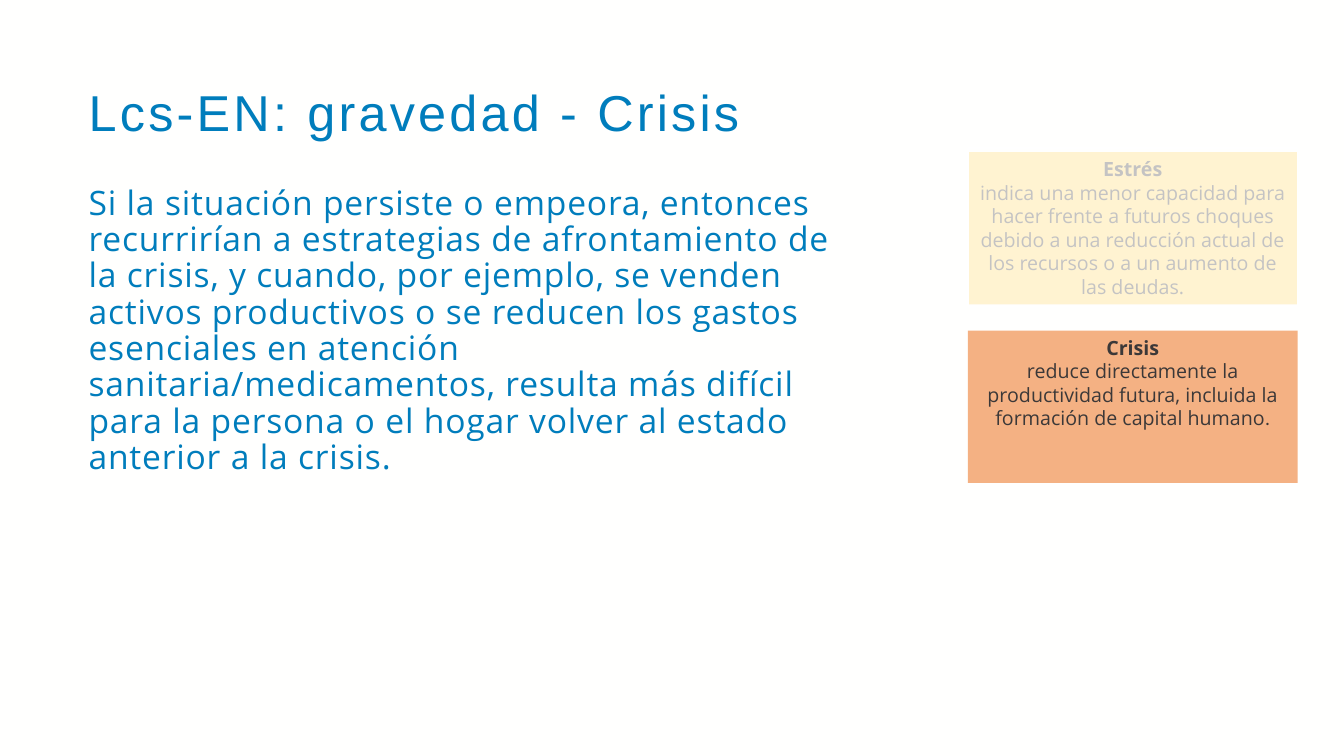
from lxml.etree import SubElement
from pptx import Presentation
from pptx.dml.color import RGBColor
from pptx.enum.shapes import MSO_SHAPE
from pptx.enum.text import MSO_ANCHOR, PP_ALIGN
from pptx.oxml.ns import qn
from pptx.util import Inches, Pt

COLORS = {
    "background": "FFFFFE",
    "blue": "007DBC",
    "stress": "FFD966",
    "crisis": "F4B183",
    "dark": "3B3838",
    "white": "FFFFFF",
}
BODY = (
    "Si la situación persiste o empeora, entonces recurrirían a estrategias de "
    "afrontamiento de la crisis, y cuando, por ejemplo, se venden activos productivos "
    "o se reducen los gastos esenciales en atención sanitaria/medicamentos, resulta "
    "más difícil para la persona o el hogar volver al estado anterior a la crisis."
)
LEVELS = [
    ("stress", "Estrés", [(
        "indica una menor capacidad para hacer frente a futuros choques debido a "
        "una reducción actual de los recursos o a un aumento de las deudas.", "Open Sans")]),
    ("crisis", "Crisis", [
        ("reduce directamente la productividad futura, incluida la formación de "
         "capital humano", "Open Sans"),
        (".", "Calibri")]),
]


def rgb(name):
    """Return the named colour."""
    return RGBColor.from_string(COLORS[name])


def add_run(p, text, font, size, color, bold=False, spacing=0):
    """Add a formatted run, with letter spacing in points."""
    r = p.add_run()
    r.text = text
    r.font.name, r.font.size, r.font.bold = font, Pt(size), bold
    r.font.color.rgb = rgb(color)
    if spacing:
        r.font._element.set("spc", str(round(spacing * 100)))


def place(sp, box):
    """Move a shape to a box given in inches."""
    sp.left, sp.top, sp.width, sp.height = map(Inches, box)


def add_title(s, box):
    """Fill and place the title."""
    sp = s.shapes.title
    place(sp, box)
    tf = sp.text_frame
    tf.vertical_anchor = MSO_ANCHOR.MIDDLE
    p = tf.paragraphs[0]
    p.alignment = PP_ALIGN.LEFT
    p.line_spacing = 0.9
    add_run(p, "Lcs-EN: gravedad - Crisis", "Arial", 36, "blue", spacing=2.3)


def add_body(s, box):
    """Add the explanatory paragraph."""
    tf = s.shapes.add_textbox(*map(Inches, box)).text_frame
    tf.word_wrap = True
    p = tf.paragraphs[0]
    p.line_spacing = 0.9
    add_run(p, BODY, "Open Sans", 24, "blue", spacing=0.6)


def add_panel(s, box, color):
    """Add a plain filled rectangle without an outline."""
    sp = s.shapes.add_shape(MSO_SHAPE.RECTANGLE, *map(Inches, box))
    sp.shadow.inherit = False
    sp.fill.solid()
    sp.fill.fore_color.rgb = rgb(color)
    sp.line.fill.background()
    return sp


def add_level(s, box, color, heading, parts):
    """Add a severity card with its heading and definition."""
    tf = add_panel(s, box, color).text_frame
    tf.word_wrap = True
    tf.vertical_anchor = MSO_ANCHOR.TOP
    p = tf.paragraphs[0]
    p.alignment = PP_ALIGN.CENTER
    add_run(p, heading, "Open Sans", 14, "dark", bold=True)
    p = tf.add_paragraph()
    p.alignment = PP_ALIGN.CENTER
    for text, font in parts:
        add_run(p, text, font, 14, "dark")


def add_veil(s, box):
    """Add a translucent white cover that fades a card."""
    sp = add_panel(s, box, "white")
    color = sp.fill._xPr.find(qn("a:solidFill"))[0]
    SubElement(color, qn("a:alpha")).set("val", "70000")
    sp.line.color.rgb = rgb("white")
    sp.line.width = Pt(1)


def add_levels(s, box):
    """Stack the severity cards and fade the first one."""
    left, top, width, height = box
    card, pitch = 1.51, height - 1.51
    for i, level in enumerate(LEVELS):
        add_level(s, (left, top + i * pitch, width, card), *level)
    add_veil(s, (left, top - 0.04, width, card + 0.06))


def main():
    """Build and save the slide."""
    prs = Presentation()
    prs.slide_width, prs.slide_height = Inches(13.33), Inches(7.5)
    s = prs.slides.add_slide(prs.slide_layouts[5])
    s.background.fill.solid()
    s.background.fill.fore_color.rgb = rgb("background")
    add_title(s, (0.78, 0.78, 12.09, 0.72))
    add_body(s, (0.78, 1.8, 7.89, 4.27))
    add_levels(s, (9.6, 1.51, 3.27, 3.28))
    prs.save("out.pptx")


if __name__ == "__main__":
    main()
